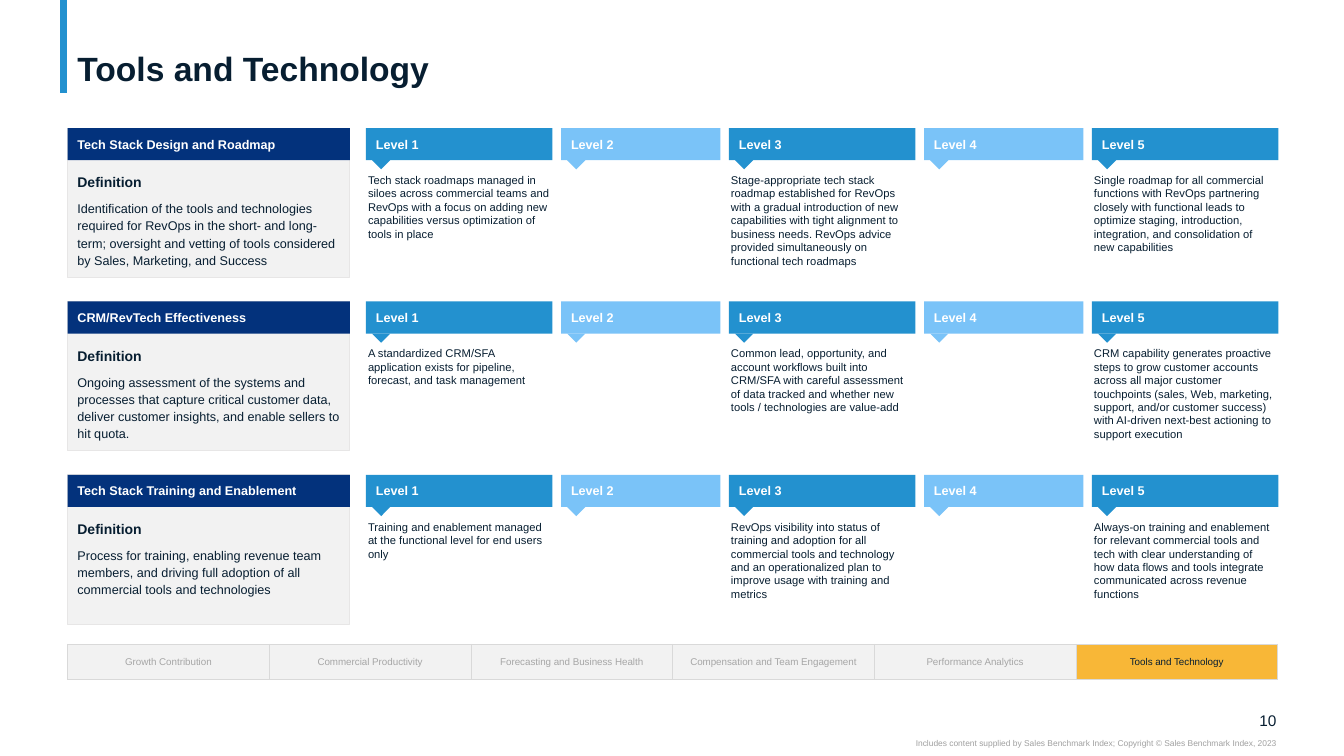
import pptx
import pptx.dml.color
import pptx.enum.shapes
import pptx.enum.text
import pptx.oxml
import pptx.oxml.ns
import pptx.util
from lxml import etree

RGBColor = pptx.dml.color.RGBColor
Inches = pptx.util.Inches
Pt = pptx.util.Pt
Shape = pptx.enum.shapes.MSO_SHAPE
Anchor = pptx.enum.text.MSO_ANCHOR
Align = pptx.enum.text.PP_ALIGN

INK = RGBColor(0x07, 0x1E, 0x31)
WHITE = RGBColor(0xFF, 0xFF, 0xFF)
NAVY = RGBColor(0x03, 0x32, 0x7C)
BLUE = RGBColor(0x23, 0x91, 0xCF)
SKY = RGBColor(0x7A, 0xC3, 0xF8)
AMBER = RGBColor(0xF8, 0xB7, 0x37)
PALE = RGBColor(0xF2, 0xF2, 0xF2)
EDGE = RGBColor(0xE7, 0xE6, 0xE6)
GRID = RGBColor(0xD9, 0xD9, 0xD9)
MUTED = RGBColor(0xA6, 0xA6, 0xA6)
FOOTER = RGBColor(0xA0, 0xA0, 0xA0)

LEFT, WIDTH = 0.67, 12
BAND_TOP, BAND_STEP, BAND_HEIGHT = 1.27, 1.72, 1.48
HEADER_HEIGHT = 0.32
TOPIC_WIDTH = 2.8
LEVELS_LEFT, LEVELS_WIDTH = 3.63, 9.05
WIDE, NARROW = 1.85, 1.58

BANDS = [
    ("Tech Stack Design and Roadmap",
     "Identification of the tools and technologies required for RevOps in the short- and long-term; "
     "oversight and vetting of tools considered by Sales, Marketing, and Success",
     {1: "Tech stack roadmaps managed in siloes across commercial teams and RevOps with a focus on "
         "adding new capabilities versus optimization of tools in place",
      3: "Stage-appropriate tech stack roadmap established for RevOps with a gradual introduction of "
         "new capabilities with tight alignment to business needs. RevOps advice provided "
         "simultaneously on functional tech roadmaps",
      5: "Single roadmap for all commercial functions with RevOps partnering closely with functional "
         "leads to optimize staging, introduction, integration, and consolidation of new capabilities"}),
    ("CRM/RevTech Effectiveness",
     "Ongoing assessment of the systems and processes that capture critical customer data, deliver "
     "customer insights, and enable sellers to hit quota.",
     {1: "A standardized CRM/SFA application exists for pipeline, forecast, and task management",
      3: "Common lead, opportunity, and account workflows built into CRM/SFA with careful assessment "
         "of data tracked and whether new tools / technologies are value-add",
      5: "CRM capability generates proactive steps to grow customer accounts across all major customer "
         "touchpoints (sales, Web, marketing, support, and/or customer success) with AI-driven "
         "next-best actioning to support execution"}),
    ("Tech Stack Training and Enablement",
     "Process for training, enabling revenue team members, and driving full adoption of all "
     "commercial tools and technologies",
     {1: "Training and enablement managed at the functional level for end users only",
      3: "RevOps visibility into status of training and adoption for all commercial tools and "
         "technology and an operationalized plan to improve usage with training and metrics",
      5: "Always-on training and enablement for relevant commercial tools and tech with clear "
         "understanding of how data flows and tools integrate communicated across revenue functions"}),
]
SECTIONS = ["Growth Contribution", "Commercial Productivity", "Forecasting and Business Health",
            "Compensation and Team Engagement", "Performance Analytics", "Tools and Technology"]


def inches(box):
    return [Inches(length) for length in box]


def write(paragraph, text, size, color=INK, bold=False, align=Align.LEFT):
    paragraph.alignment = align
    run = paragraph.add_run()
    run.text = text
    run.font.name = "Arial"
    run.font.size = Pt(size)
    run.font.bold = bold
    run.font.color.rgb = color


def set_frame(frame, anchor, margins):
    frame.word_wrap = True
    frame.vertical_anchor = anchor
    frame.margin_left, frame.margin_top, frame.margin_right, frame.margin_bottom = inches(margins)


def add_text(shapes, box, text, size, color=INK, bold=False, align=Align.LEFT,
             anchor=Anchor.TOP, margins=(0, 0, 0, 0)):
    frame = shapes.add_textbox(*inches(box)).text_frame
    set_frame(frame, anchor, margins)
    write(frame.paragraphs[0], text, size, color, bold, align)
    return frame


def add_block(shapes, kind, box, fill, outline=None):
    shape = shapes.add_shape(kind, *inches(box))
    shape.shadow.inherit = False
    shape.fill.solid()
    shape.fill.fore_color.rgb = fill
    if outline is None:
        shape.line.fill.background()
    else:
        shape.line.color.rgb = outline
        shape.line.width = Pt(0.5)
    return shape


def add_header(shapes, box, text, fill):
    frame = add_block(shapes, Shape.RECTANGLE, box, fill).text_frame
    set_frame(frame, Anchor.MIDDLE, (0.1, 0.05, 0.1, 0.05))
    write(frame.paragraphs[0], text, 9, WHITE, True)


def add_title(slide, box, text):
    left, top, width, height = box
    bar = slide.shapes.add_connector(pptx.enum.shapes.MSO_CONNECTOR.STRAIGHT,
                                     *inches((left - 0.04, 0, left - 0.04, top + height + 0.04)))
    bar.line.color.rgb = BLUE
    bar.line.width = Pt(5)
    etree.SubElement(bar._element.spPr, pptx.oxml.ns.qn("a:effectLst"))
    frame = add_text(slide.shapes, box, text, 24, bold=True, anchor=Anchor.BOTTOM,
                     margins=(0.1, 0, 0.1, 0))
    frame.paragraphs[0].line_spacing = 0.9


def add_topic(slide, box, name, definition):
    left, top, width, height = box
    frame = add_block(slide.shapes, Shape.RECTANGLE, box, PALE, EDGE).text_frame
    set_frame(frame, Anchor.TOP, (0.1, 0.43, 0.08, 0.05))
    heading, body = frame.paragraphs[0], frame.add_paragraph()
    write(heading, "Definition", 10, bold=True)
    write(body, definition, 9)
    for paragraph in (heading, body):
        paragraph.line_spacing = 1.14
        paragraph.space_after = Pt(6)
    add_header(slide.shapes, (left, top, width, HEADER_HEIGHT), name, NAVY)


def add_levels(slide, box, descriptions):
    left, top, width, height = box
    gap = (width - 3 * WIDE - 2 * NARROW) / 4
    group = slide.shapes.add_group_shape()
    for level in range(1, 6):
        column, fill = (WIDE, BLUE) if level % 2 else (NARROW, SKY)
        add_header(group.shapes, (left, top, column, HEADER_HEIGHT), f"Level {level}", fill)
        pointer = add_block(group.shapes, Shape.ISOSCELES_TRIANGLE,
                            (left + 0.06, top + HEADER_HEIGHT, 0.18, 0.09), fill)
        pointer.rotation = 180
        if level in descriptions:
            add_text(slide.shapes, (left + 0.02, top + 0.45, column - 0.04, height - 0.45),
                     descriptions[level], 8)
        left += column + gap


def add_cell_borders(cell):
    properties = cell._tc.get_or_add_tcPr()
    for position, side in enumerate(("lnL", "lnR", "lnT", "lnB")):
        properties.insert(position, pptx.oxml.parse_xml(
            f'<a:{side} {pptx.oxml.ns.nsdecls("a")} w="{Pt(0.5)}"><a:solidFill>'
            f'<a:srgbClr val="{GRID}"/></a:solidFill></a:{side}>'))


def add_section_bar(slide, box, current):
    table = slide.shapes.add_table(1, len(SECTIONS), *inches(box)).table
    table.first_row = table.horz_banding = False
    for cell, section in zip(table.iter_cells(), SECTIONS):
        active = section == current
        cell.fill.solid()
        cell.fill.fore_color.rgb = AMBER if active else PALE
        cell.vertical_anchor = Anchor.MIDDLE
        write(cell.text_frame.paragraphs[0], section, 7, INK if active else MUTED, align=Align.CENTER)
        add_cell_borders(cell)


def add_footer(slide, box):
    left, top, width, height = box
    add_text(slide.shapes, (left, top, width, 0.19), "10", 11, align=Align.RIGHT, anchor=Anchor.MIDDLE)
    add_text(slide.shapes, (left, top + 0.27, width, 0.1),
             "Includes content supplied by Sales Benchmark Index; Copyright © Sales Benchmark Index, 2023",
             6, FOOTER, align=Align.RIGHT)


def main():
    presentation = pptx.Presentation()
    presentation.slide_width = Inches(13.33)
    presentation.slide_height = Inches(7.5)
    slide = presentation.slides.add_slide(presentation.slide_layouts[6])
    add_title(slide, (LEFT, 0.04, WIDTH, 0.84), "Tools and Technology")
    for row, (name, definition, descriptions) in enumerate(BANDS):
        top = BAND_TOP + row * BAND_STEP
        add_topic(slide, (LEFT, top, TOPIC_WIDTH, BAND_HEIGHT), name, definition)
        add_levels(slide, (LEVELS_LEFT, top, LEVELS_WIDTH, BAND_HEIGHT), descriptions)
    add_section_bar(slide, (LEFT, 6.39, WIDTH, 0.35), "Tools and Technology")
    add_footer(slide, (7.5, 7.05, 5.16, 0.37))
    presentation.save("out.pptx")


if __name__ == "__main__":
    main()
